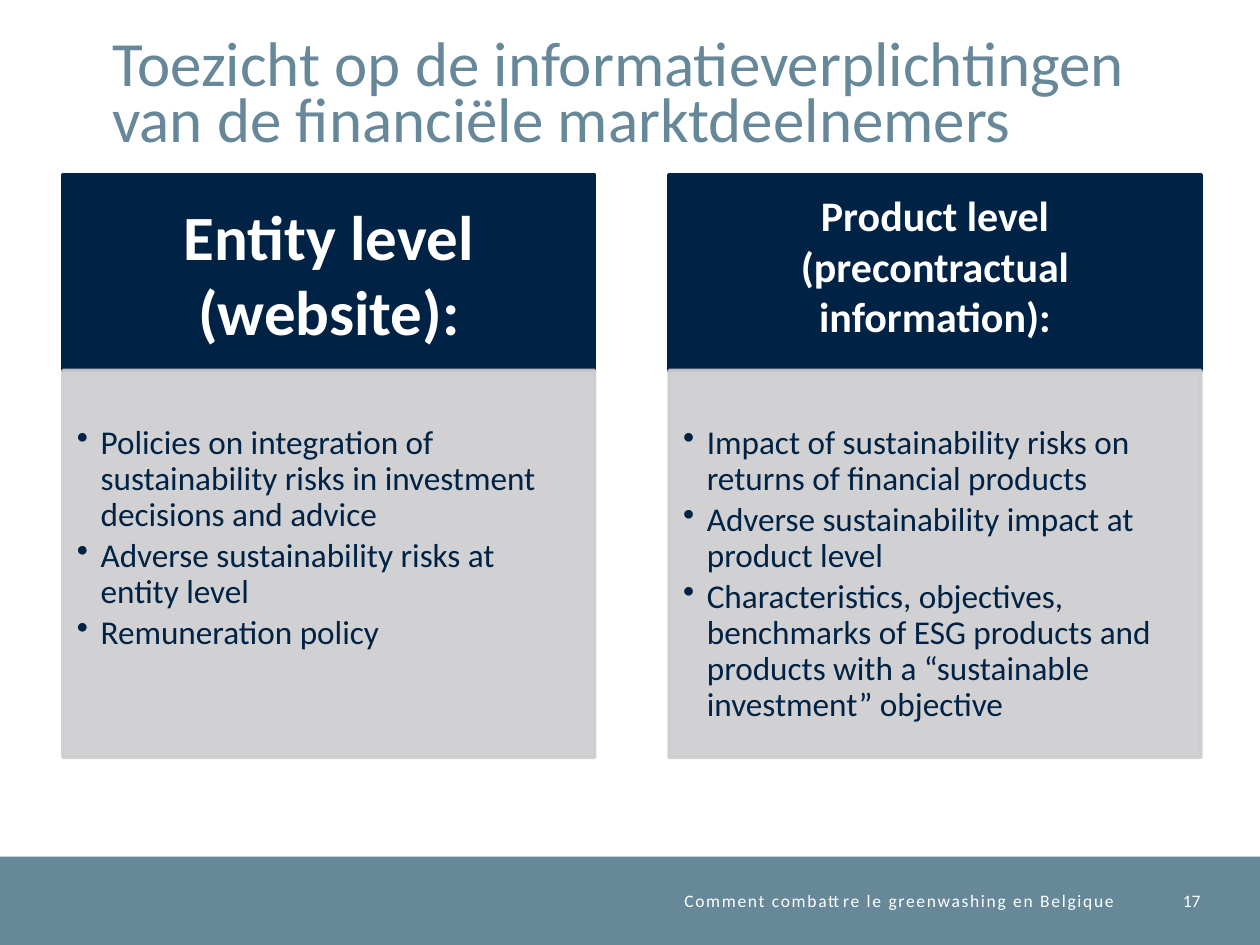
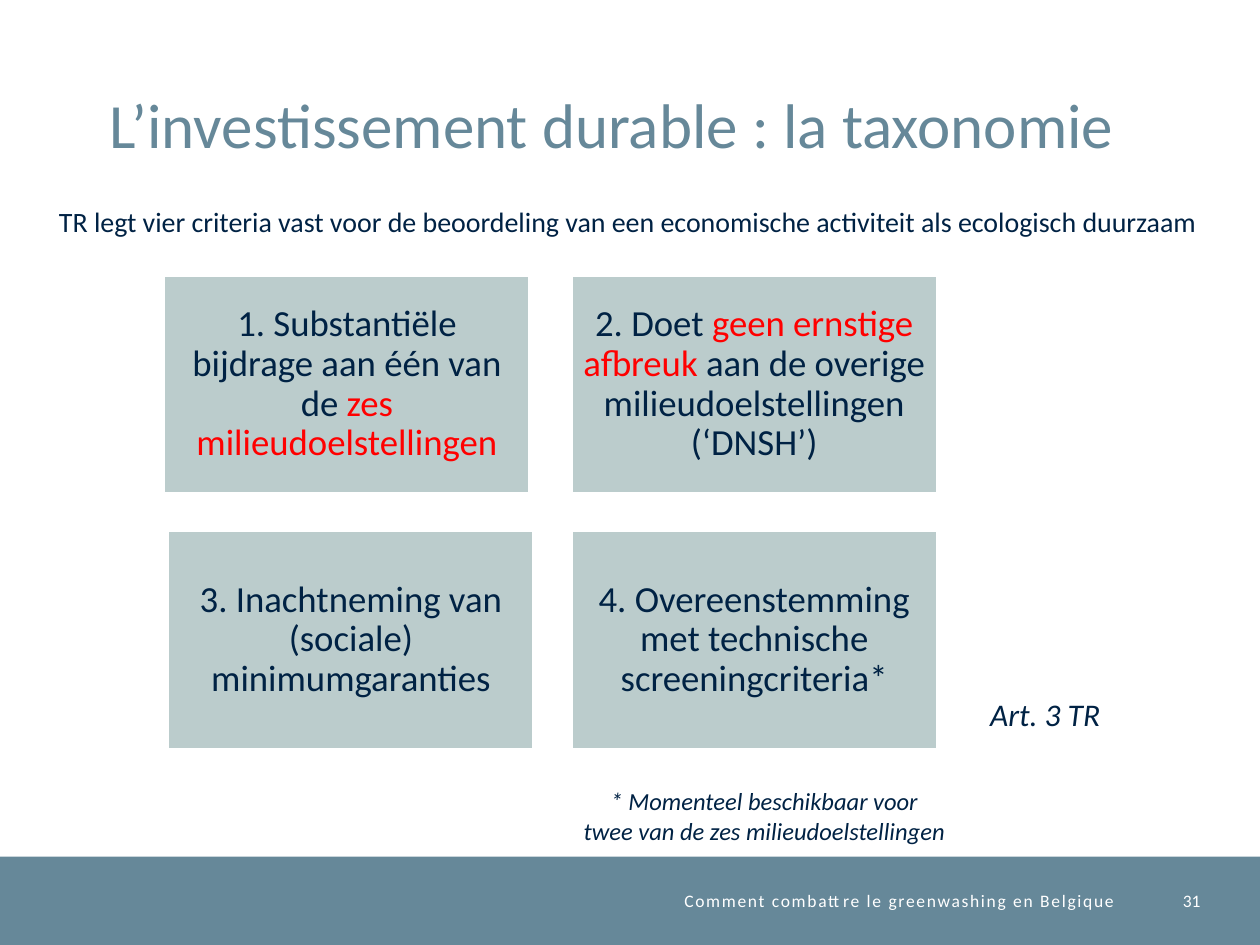
import pptx
import pptx.dml.color
import pptx.enum.shapes
import pptx.enum.text
import pptx.oxml.ns
import pptx.util
from lxml import etree

Cm = pptx.util.Cm
Pt = pptx.util.Pt
Align = pptx.enum.text.PP_ALIGN
Anchor = pptx.enum.text.MSO_ANCHOR
qn = pptx.oxml.ns.qn

FONT = "Calibri"
NAVY = "002244"
STEEL = "668899"
SAGE = "BBCCCC"
GREY = "CCCDCF"
RED = "FF0000"
WHITE = "FFFFFF"
BAND_TOP, BAND_HEIGHT = 17.27, 1.78


def rgb(hex_colour):
    return pptx.dml.color.RGBColor.from_string(hex_colour)


def write(shape, paragraphs, size=18, colour=NAVY, bold=False, italic=False,
          align=Align.LEFT, anchor=Anchor.TOP, insets=(0, 0, 0, 0),
          line_spacing=None, space_after=0, bullet=False, tracking=0):
    frame = shape.text_frame
    frame.word_wrap = True
    frame.auto_size = pptx.enum.text.MSO_AUTO_SIZE.NONE
    frame.vertical_anchor = anchor
    frame.margin_left, frame.margin_top, frame.margin_right, frame.margin_bottom = map(Cm, insets)
    for index, content in enumerate(paragraphs):
        paragraph = frame.add_paragraph() if index else frame.paragraphs[0]
        if bullet:
            properties = paragraph._p.get_or_add_pPr()
            properties.set("marL", str(Cm(0.48)))
            properties.set("indent", str(-Cm(0.48)))
            etree.SubElement(properties, qn("a:buChar")).set("char", "•")
        paragraph.alignment = align
        paragraph.space_before = Pt(0)
        paragraph.space_after = Pt(space_after)
        if line_spacing:
            paragraph.line_spacing = line_spacing
        pieces = [(content, colour)] if isinstance(content, str) else content
        for text, text_colour in pieces:
            for line_number, line in enumerate(text.split("\n")):
                if line_number:
                    paragraph.add_line_break()
                run = paragraph.add_run()
                run.text = line
                run.font.name = FONT
                run.font.size = Pt(size)
                run.font.bold = bold
                run.font.italic = italic
                run.font.color.rgb = rgb(text_colour)
                if tracking:
                    run._r.get_or_add_rPr().set("spc", str(tracking))


levels = [
    ("Entity level (website):", 36, (0.71, 0.41, 0.71, 0.41), [
        "Policies on integration of sustainability risks in investment decisions and advice",
        "Adverse sustainability risks at entity level",
        "Remuneration policy",
    ]),
    ("Product level (precontractual information):", 24, (0.48, 0.13, 0.48, 0.43), [
        "Impact of sustainability risks on returns of financial products",
        "Adverse sustainability impact at product level",
        "Characteristics, objectives, benchmarks of ESG products and products with "
        "a “sustainable investment” objective",
    ]),
]
level_boxes = []
for column, (heading, heading_size, heading_insets, duties) in enumerate(levels):
    left = 1.27 + column * 12.22
    level_boxes += [
        ((left, 3.53, 10.72, 3.94), NAVY, NAVY, 100, [heading],
         dict(size=heading_size, colour=WHITE, bold=True, align=Align.CENTER,
              anchor=Anchor.MIDDLE, insets=heading_insets)),
        ((left, 7.47, 10.72, 7.8), GREY, GREY, 90, duties,
         dict(size=19, insets=(0.28, 1.12, 0.38, 0.43), line_spacing=0.9,
              space_after=2.85, bullet=True)),
    ]

criteria = [
    (3.3, 5.54, [("1. Substantiële bijdrage aan één van de ", NAVY),
                 ("zes milieudoelstellingen", RED)]),
    (11.51, 5.54, [("2. Doet ", NAVY), ("geen ernstige afbreuk ", RED),
                   ("aan de overige milieudoelstellingen (‘DNSH’)", NAVY)]),
    (3.38, 10.69, "3. Inachtneming van (sociale) minimumgaranties"),
    (11.51, 10.69, "4. Overeenstemming met technische screeningcriteria*"),
]
criteria_boxes = [
    ((left, top, 7.39, 4.42), SAGE, WHITE, 100, [criterion],
     dict(size=21, align=Align.CENTER, anchor=Anchor.MIDDLE,
          insets=(0.23, 0.23, 0.23, 0.23), line_spacing=0.9))
    for left, top, criterion in criteria
]
criteria_notes = [
    ((1.19, 3.71, 23.9, 1.24),
     "TR legt vier criteria vast voor de beoordeling van een economische activiteit "
     "als ecologisch duurzaam",
     dict(size=16, line_spacing=Pt(30.8))),
    ((11.51, 15.72, 7.8, 1.45),
     "* Momenteel beschikbaar voor\ntwee van de zes milieudoelstellingen",
     dict(size=14, italic=True, align=Align.CENTER, insets=(0.13, 0.13, 0.13, 0.13))),
    ((19.71, 13.89, 3.89, 1.02), "Art. 3 TR",
     dict(size=18, italic=True, insets=(0.25, 0.13, 0.25, 0.13))),
]

pages = [
    ("17", "Toezicht op de informatieverplichtingen van de financiële marktdeelnemers",
     (2.26, 0.38), level_boxes, []),
    ("31", "L’investissement durable : la taxonomie",
     (2.21, 0.51), criteria_boxes, criteria_notes),
]
band = ((0, BAND_TOP, 25.4, BAND_HEIGHT), STEEL, None, 100, [], {})
footer_format = dict(size=10, colour=WHITE, align=Align.RIGHT, anchor=Anchor.MIDDLE)

deck = pptx.Presentation()
deck.slide_width = Cm(25.4)
deck.slide_height = Cm(19.05)

for number, heading, (title_left, title_top), boxes, notes in pages:
    slide = deck.slides.add_slide(deck.slide_layouts[5])
    title = slide.shapes.title
    title.left, title.top = Cm(title_left), Cm(title_top)
    title.width, title.height = Cm(21.92), Cm(2.74)
    write(title, [heading], size=36, colour=STEEL, anchor=Anchor.BOTTOM, line_spacing=Pt(32))

    for place, fill, outline, opacity, paragraphs, text_format in [band] + boxes:
        box = slide.shapes.add_shape(pptx.enum.shapes.MSO_SHAPE.RECTANGLE, *map(Cm, place))
        box.shadow.inherit = False
        box.fill.solid()
        box.fill.fore_color.rgb = rgb(fill)
        if outline:
            box.line.color.rgb = rgb(outline)
            box.line.width = Pt(2)
        else:
            box.line.fill.background()
        if opacity < 100:
            for tint in list(box._element.spPr.iter(qn("a:srgbClr"))):
                etree.SubElement(tint, qn("a:alpha")).set("val", str(opacity * 1000))
        write(box, paragraphs, **text_format)

    footers = [
        ((6.71, BAND_TOP, 15.75, BAND_HEIGHT), "Comment combattre le greenwashing en Belgique",
         dict(footer_format, tracking=100)),
        ((22.96, BAND_TOP, 1.24, BAND_HEIGHT), number, footer_format),
    ]
    for place, text, text_format in notes + footers:
        write(slide.shapes.add_textbox(*map(Cm, place)), [text], **text_format)

deck.save("out.pptx")
